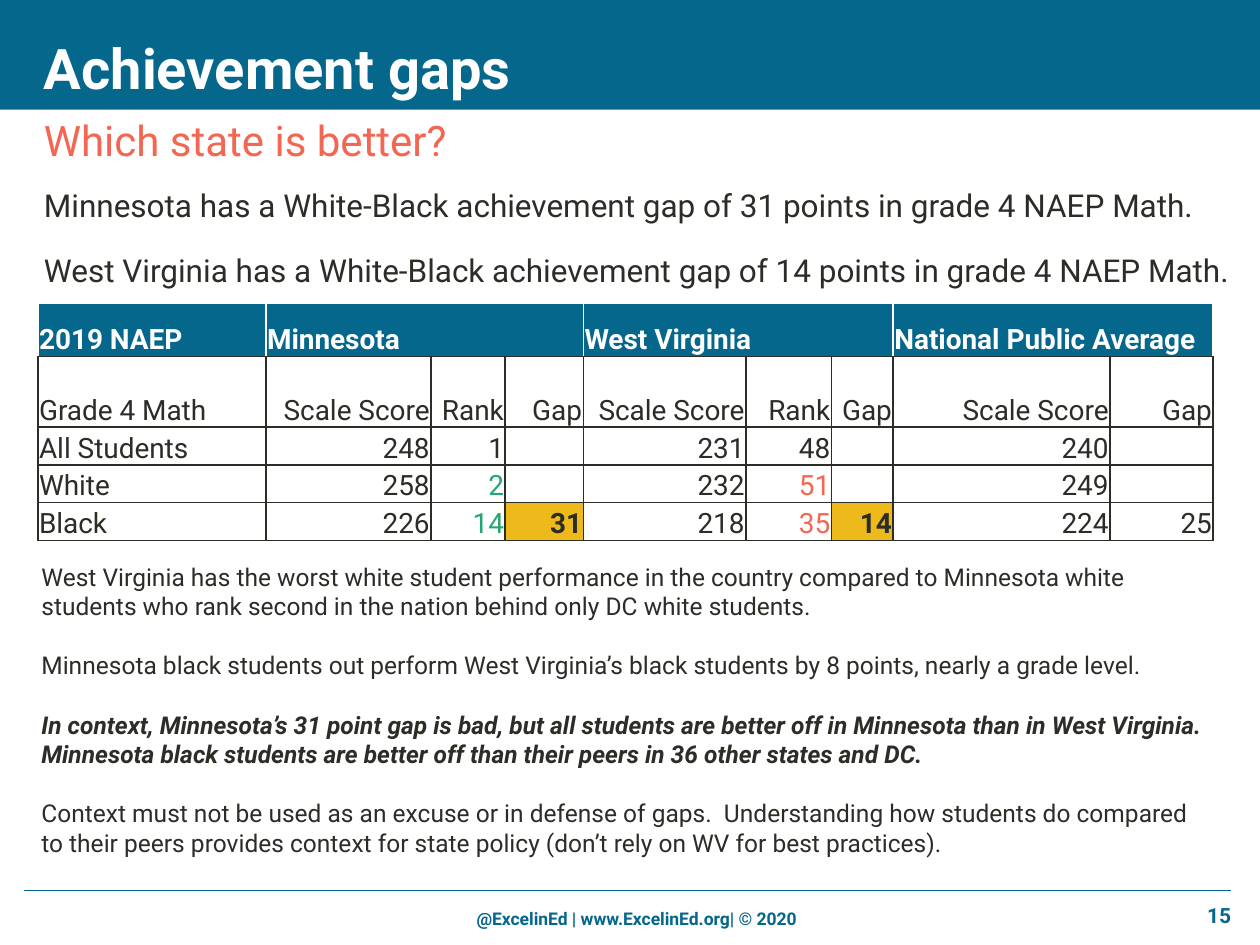
from lxml import etree
from pptx import Presentation, util as u
from pptx.dml.color import RGBColor
from pptx.enum import shapes, text
from pptx.oxml import ns

HUES = {"blue": "05678B", "coral": "F26652", "dark": "2C2D27",
        "green": "25A570", "gold": "EEB91A", "white": "FFFFFF"}
RIGHT = text.PP_ALIGN.RIGHT

deck = Presentation()
deck.slide_width, deck.slide_height = u.Inches(10), u.Inches(7.5)
slide = deck.slides.add_slide(deck.slide_layouts[6])


def put_run(para, words, size, hue, bold=False, slant=False):
    run = para.add_run()
    run.text = words
    font = run.font
    font.name, font.size = "Roboto", u.Pt(size)
    font.bold, font.italic = bold, slant
    font.color.rgb = RGBColor.from_string(HUES[hue])


def put_box(left, top, wide, high, anchor=text.MSO_ANCHOR.TOP, wrap=True):
    box = slide.shapes.add_textbox(*map(u.Inches, (left, top, wide, high)))
    frame = box.text_frame
    frame.word_wrap, frame.vertical_anchor = wrap, anchor
    return frame


# Footer
foot = put_box(3.43, 7.16, 2.99, 0.27, wrap=False).paragraphs[0]
foot.alignment = RIGHT
put_run(foot, "@ExcelinEd | www.ExcelinEd.org| © 2020", 10, "blue", True)

rule = slide.shapes.add_connector(
    shapes.MSO_CONNECTOR.STRAIGHT,
    u.Inches(0.19), u.Inches(7.07), u.Inches(9.77), u.Inches(7.07))
rule.line.color.rgb = RGBColor.from_string(HUES["blue"])
rule.line.width = u.Pt(0.75)
etree.SubElement(rule._element.spPr, ns.qn("a:effectLst"))

page = put_box(9.43, 7.13, 0.44, 0.27, text.MSO_ANCHOR.MIDDLE).paragraphs[0]
page.alignment = RIGHT
put_run(page, "15", 12, "blue", True)

# Title band and subtitle
band = slide.shapes.add_shape(
    shapes.MSO_SHAPE.RECTANGLE, 0, 0, deck.slide_width, u.Inches(0.87))
band.shadow.inherit = False
band.fill.solid()
band.fill.fore_color.rgb = RGBColor.from_string(HUES["blue"])
band.line.fill.background()

title = put_box(0.25, 0.08, 8.23, 0.77, text.MSO_ANCHOR.BOTTOM)
put_run(title.paragraphs[0], "Achievement gaps", 32, "white", True)
lead = put_box(0.25, 0.86, 8.23, 0.5)
put_run(lead.paragraphs[0], "Which state is better?", 24, "coral")

# The two gaps
gaps = put_box(0.25, 1.43, 9.71, 0.95)
put_run(gaps.paragraphs[0], "Minnesota has a White-Black achievement gap "
        "of 31 points in grade 4 NAEP Math.", 18, "dark")
para = gaps.add_paragraph()
para.space_before = u.Pt(15.5)
put_run(para, "West Virginia has a White-Black achievement gap "
        "of 14 points in grade 4 NAEP Math.", 18, "dark")

# Score table
cols = [1.81, 1.31, 0.59, 0.62, 1.29, 0.68, 0.49, 1.72, 0.82]
highs = [0.42, 0.56, 0.3, 0.3, 0.3]
rows = [
    ["2019 NAEP", "Minnesota", "", "", "West Virginia", "", "",
     "National Public Average", ""],
    ["Grade 4 Math", "Scale Score", "Rank", "Gap", "Scale Score", "Rank",
     "Gap", "Scale Score", "Gap"],
    ["All Students", "248", "1", "", "231", "48", "", "240", ""],
    ["White", "258", "2", "", "232", "51", "", "249", ""],
    ["Black", "226", "14", "31", "218", "35", "14", "224", "25"],
]
ranks = {2: "green", 5: "coral"}
marks = [(4, 3), (4, 6)]

grid = slide.shapes.add_table(
    len(rows), len(cols), u.Inches(0.3), u.Inches(2.41),
    u.Inches(sum(cols)), u.Inches(sum(highs))).table
for col, wide in zip(grid.columns, cols):
    col.width = u.Inches(wide)
for row, high in zip(grid.rows, highs):
    row.height = u.Inches(high)
for first, last in [(1, 3), (4, 6), (7, 8)]:
    grid.cell(0, first).merge(grid.cell(0, last))

for r, row in enumerate(rows):
    for c, words in enumerate(row):
        cell = grid.cell(r, c)
        head, mark = r == 0, (r, c) in marks
        cell.margin_left = cell.margin_right = cell.margin_top = u.Inches(0.01)
        cell.margin_bottom = 0
        cell.vertical_anchor = text.MSO_ANCHOR.BOTTOM

        # Borders come before the fill
        props = cell._tc.get_or_add_tcPr()
        for side in "LRTB":
            hue = "white" if head and side != "B" else "dark"
            edge = etree.SubElement(props, ns.qn("a:ln" + side), w="12700")
            fill = etree.SubElement(edge, ns.qn("a:solidFill"))
            etree.SubElement(fill, ns.qn("a:srgbClr"), val=HUES[hue])
        back = "blue" if head else "gold" if mark else "white"
        cell.fill.solid()
        cell.fill.fore_color.rgb = RGBColor.from_string(HUES[back])

        para = cell.text_frame.paragraphs[0]
        if not head and c > 0:
            para.alignment = RIGHT
        if words:
            hue = "white" if head else ranks.get(c, "dark") if r > 2 else "dark"
            put_run(para, words, 16, hue, head or mark)
        else:
            etree.SubElement(para._p, ns.qn("a:endParaRPr"), sz="1600")

# Notes under the table
notes = [
    ("West Virginia has the worst white student performance in the country "
     "compared to Minnesota white students who rank second in the nation "
     "behind only DC white students.", False),
    ("Minnesota black students out perform West Virginia’s black students "
     "by 8 points, nearly a grade level.", False),
    ("In context, Minnesota’s 31 point gap is bad, but all students are "
     "better off in Minnesota than in West Virginia.  Minnesota black "
     "students are better off than their peers in 36 other states and DC.",
     True),
    ("Context must not be used as an excuse or in defense of gaps.  "
     "Understanding how students do compared to their peers provides context "
     "for state policy (don’t rely on WV for best practices).", False),
]
frame = put_box(0.23, 4.41, 9.52, 2.46)
for i, (words, strong) in enumerate(notes):
    para = frame.add_paragraph() if i else frame.paragraphs[0]
    if i:
        para.space_before = u.Pt(17)
    put_run(para, words, 14, "dark", strong, strong)

deck.save("out.pptx")
